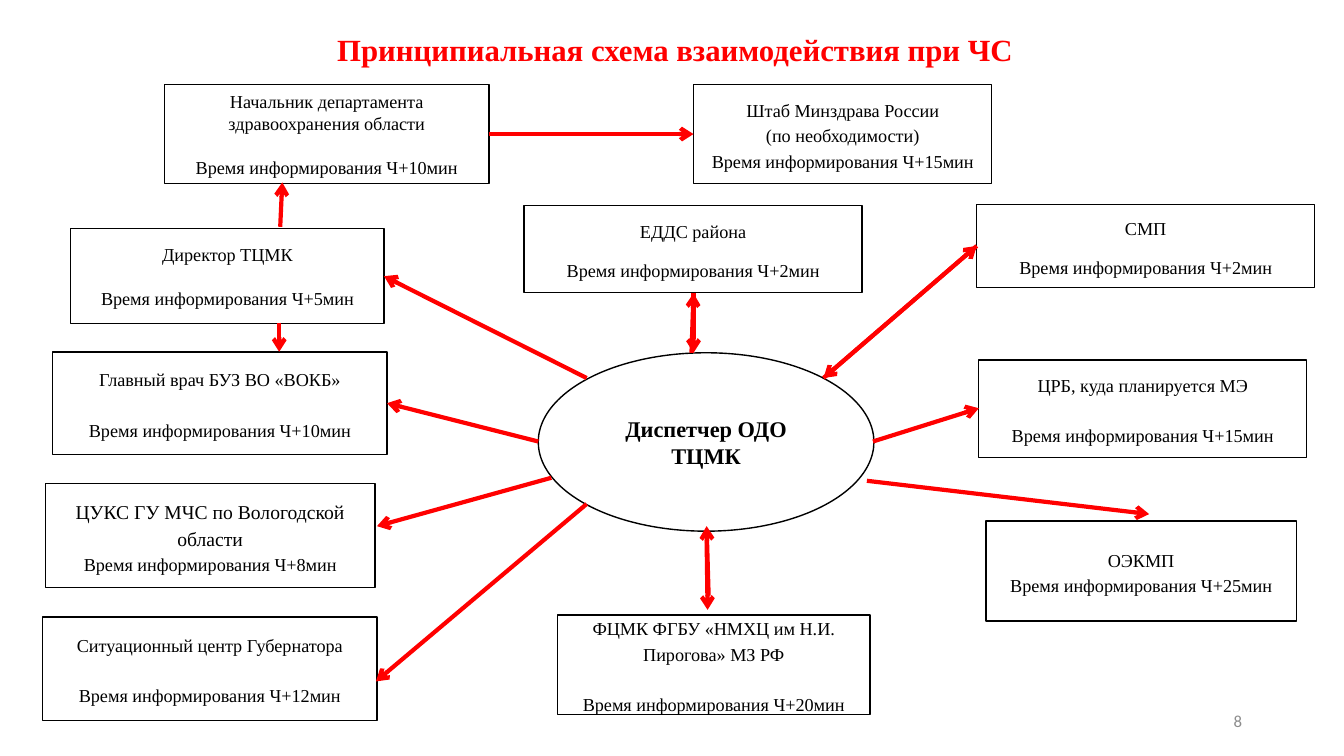
from pptx import Presentation
from pptx.dml.color import RGBColor
from pptx.enum.shapes import MSO_CONNECTOR, MSO_SHAPE
from pptx.enum.text import MSO_ANCHOR, PP_ALIGN
from pptx.oxml.ns import qn
from pptx.util import Inches, Pt
from lxml.etree import SubElement

THEME = {
    "paper": RGBColor(255, 255, 255),
    "ink": RGBColor(0, 0, 0),
    "accent": RGBColor(255, 0, 0),
    "muted": RGBColor(140, 140, 140),
    "title": Pt(22), "hub": Pt(16), "large": Pt(14), "body": Pt(13), "number": Pt(12),
    "border": Pt(1), "arrow": Pt(3),
    "serif": "Times New Roman", "sans": "Calibri",
}

# Square grid: ten cells to the inch
CELL = Inches(0.1)
COLUMNS, ROWS = 133.33, 75

presentation = Presentation()
presentation.slide_width = round(COLUMNS * CELL)
presentation.slide_height = round(ROWS * CELL)
slide = presentation.slides.add_slide(presentation.slide_layouts[6])


def grid(*cells):
    return [round(cell * CELL) for cell in cells]


def write(shape, lines, color, anchor=MSO_ANCHOR.MIDDLE, align=PP_ALIGN.CENTER,
          font="serif", bold=False, spacing=1.0, gap=0):
    """Fill a shape with (text, size) lines; gap opens space before the last one."""
    frame = shape.text_frame
    for name, value in {"word_wrap": True, "vertical_anchor": anchor}.items():
        setattr(frame, name, value)
    for index, (text, size) in enumerate(lines):
        paragraph = frame.paragraphs[0] if index == 0 else frame.add_paragraph()
        paragraph.text = text
        last = index == len(lines) - 1
        layout = {"alignment": align, "line_spacing": spacing,
                  "space_before": Pt(gap if last and index else 0)}
        for name, value in layout.items():
            setattr(paragraph, name, value)
        for name, value in {"name": THEME[font], "size": THEME[size], "bold": bold}.items():
            setattr(paragraph.font, name, value)
        paragraph.font.color.rgb = THEME[color]


# Title and slide number
title = slide.shapes.add_textbox(*grid(0.3, 2.6, COLUMNS, 4.7))
write(title, [("Принципиальная схема взаимодействия при ЧС", "title")], "accent",
      anchor=MSO_ANCHOR.TOP, bold=True)
number = slide.shapes.add_textbox(*grid(94.2, 69.5, 30, 4))
write(number, [("8", "number")], "muted", align=PP_ALIGN.RIGHT, font="sans")

# Dispatcher in the middle, informed parties around: place, name, minutes, text format
OPEN = {"spacing": 1.15, "gap": 18}
LOOSE = {"spacing": 1.15, "gap": 10}
TIGHT = {"spacing": 1.15}
SINGLE = {"gap": 16}
parties = [
    ((7, 22.7, 31.1, 9.4), ["Директор ТЦМК"], 5, SINGLE),
    ((16.3, 8.4, 32.2, 9.8), ["Начальник департамента здравоохранения области"], 10, SINGLE),
    ((5.2, 34.9, 33.2, 10.2), ["Главный врач БУЗ ВО «ВОКБ»"], 10, OPEN),
    ((55.3, 61, 31, 9.9), ["ФЦМК ФГБУ «НМХЦ им Н.И. Пирогова» МЗ РФ"], 20, OPEN),
    ((4.2, 61.2, 33.2, 10.3), ["Ситуационный центр Губернатора"], 12, OPEN),
    ((97.1, 35.7, 32.5, 9.7), ["ЦРБ, куда планируется МЭ"], 15, OPEN),
    ((96.9, 20.3, 33.5, 8.2), ["СМП"], 2, LOOSE),
    ((68.8, 8.4, 29.6, 9.8), ["Штаб Минздрава России", "(по необходимости)"], 15, TIGHT),
    ((52, 20.4, 33.5, 8.6), ["ЕДДС района"], 2, LOOSE),
    ((4.5, 48, 32.7, 10.3), ["ЦУКС ГУ МЧС по Вологодской области"], 8, {**TIGHT, "size": "large"}),
    ((97.8, 51.7, 30.8, 9.9), ["ОЭКМП"], 25, TIGHT),
]
nodes = [(MSO_SHAPE.OVAL, (53.4, 35, 33.3, 17.7), [("Диспетчер ОДО ТЦМК", "hub")], {"bold": True})]
for place, names, minutes, layout in parties:
    layout = dict(layout)
    size = layout.pop("size", "body")
    lines = [(name, size) for name in names]
    lines.append((f"Время информирования Ч+{minutes}мин", "body"))
    nodes.append((MSO_SHAPE.RECTANGLE, place, lines, layout))

for outline, place, lines, layout in nodes:
    shape = slide.shapes.add_shape(outline, *grid(*place))
    shape.shadow.inherit = False
    shape.fill.solid()
    shape.fill.fore_color.rgb = THEME["paper"]
    shape.line.color.rgb = THEME["ink"]
    shape.line.width = THEME["border"]
    write(shape, lines, "ink", **layout)

# Arrows: start column and row, end column and row
arrows = [
    (58.2, 50, 37.3, 67.6),     # governor's situation centre
    (86, 47.7, 114, 51),        # expert department
    (86.6, 43.8, 97.1, 40.5),   # district hospital
    (81.7, 37.5, 96.9, 24.4),   # ambulance, both ways
    (96.9, 24.4, 81.7, 37.5),
    (53.4, 43.8, 38.4, 40),     # chief physician
    (58.2, 37.5, 38.1, 27.4),   # director
    (27.8, 22.5, 28, 18.1),     # director to department head
    (27.7, 32, 27.7, 34.9),     # director to chief physician
    (48.5, 13.3, 68.8, 13.3),   # department head to ministry
    (68.8, 29.1, 68.8, 35),     # district duty service, both ways
    (68.6, 35, 68.8, 29.1),
    (70.3, 59.1, 70.1, 52.2),   # federal centre, both ways
    (70.1, 53.5, 70.2, 60.5),
    (54.7, 47.4, 37.4, 52.2),   # crisis management centre
]
for ends in arrows:
    arrow = slide.shapes.add_connector(MSO_CONNECTOR.STRAIGHT, *grid(*ends))
    arrow.line.color.rgb = THEME["accent"]
    arrow.line.width = THEME["arrow"]
    SubElement(arrow.line._get_or_add_ln(), qn("a:tailEnd"), type="arrow")
    SubElement(arrow._element.spPr, qn("a:effectLst"))

presentation.save("out.pptx")
